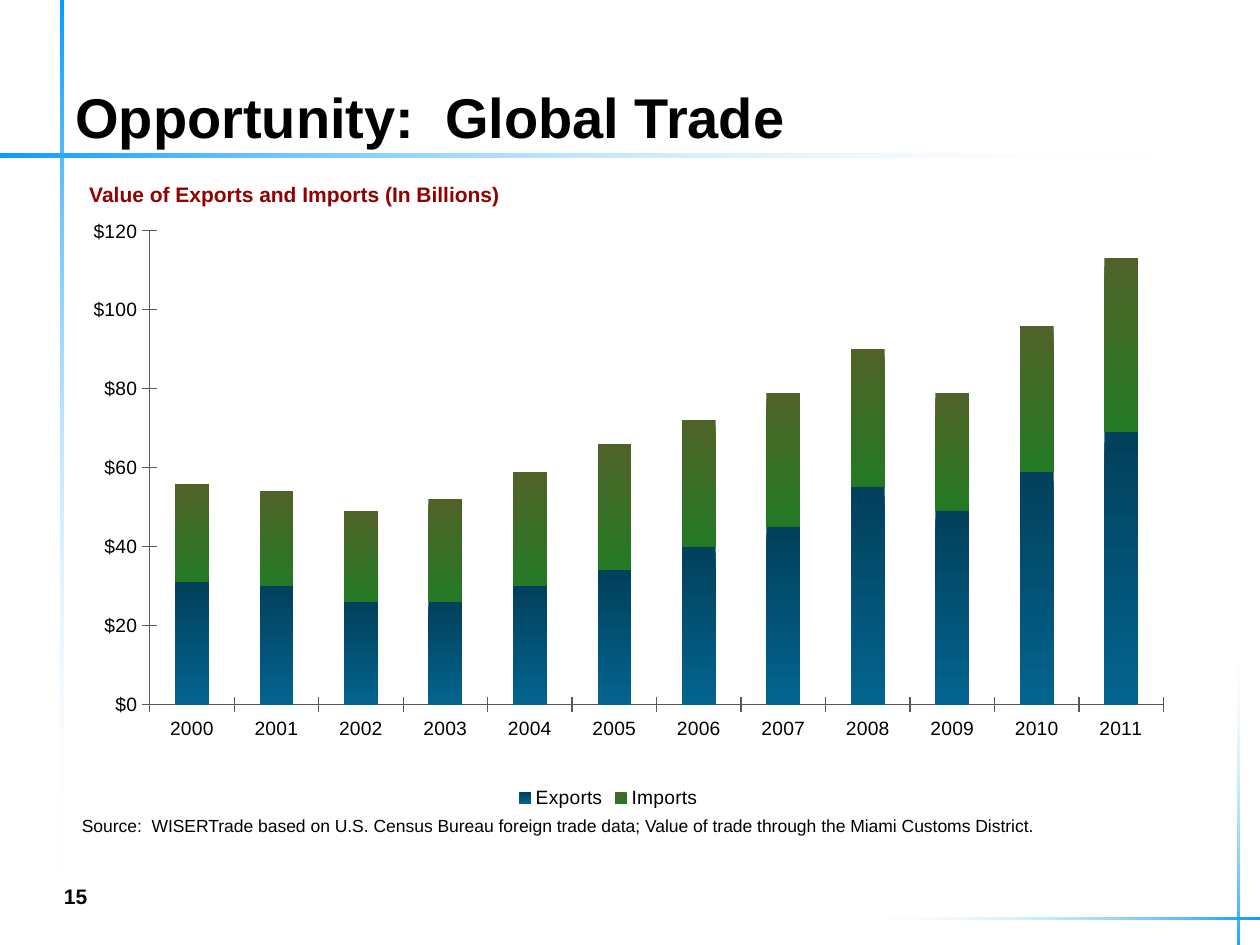
"""Build a slide with a stacked column chart of exports and imports."""
import pptx
import pptx.chart.data
import pptx.dml.color
import pptx.enum.chart
import pptx.enum.shapes
import pptx.enum.text
import pptx.oxml
import pptx.oxml.ns
import pptx.util

Cm = pptx.util.Cm
Pt = pptx.util.Pt
RGB = pptx.dml.color.RGBColor
Anchor = pptx.enum.text.MSO_ANCHOR
Tick = pptx.enum.chart.XL_TICK_MARK

BLACK = RGB(0x00, 0x00, 0x00)
WHITE = RGB(0xFF, 0xFF, 0xFF)
SKY = RGB(0x00, 0x99, 0xFF)
MAROON = RGB(0x92, 0x00, 0x00)
GREY = RGB(0x59, 0x59, 0x59)
NAVY = RGB(0x02, 0x40, 0x5C)
BLUE = RGB(0x03, 0x64, 0x8F)
OLIVE = RGB(0x4F, 0x62, 0x28)
GREEN = RGB(0x24, 0x7A, 0x24)

YEARS = [str(year) for year in range(2000, 2012)]
TRADE = {
    "Exports": ([31, 30, 26, 26, 30, 34, 40, 45, 55, 49, 59, 69], (NAVY, BLUE)),
    "Imports": ([25, 24, 23, 26, 29, 32, 32, 34, 35, 30, 37, 44], (OLIVE, GREEN)),
}
PLOT = {"x": 0.087, "y": 0.034, "w": 0.913, "h": 0.785}


def put(item, **values):
    """Set each named value on the item."""
    for name, value in values.items():
        setattr(item, name, value)


def blend(fill, pair):
    """Fill from the first colour at the top to the second at the bottom."""
    fill.gradient()
    fill.gradient_angle = 270
    for stop, tone in zip(fill.gradient_stops, pair):
        stop.color.rgb = tone


class Page:
    """Hold the text style and the current slide."""

    font = {"name": "Arial", "bold": False}

    def __init__(self, deck):
        """Add a blank slide to the deck."""
        self.slide = deck.slides.add_slide(deck.slide_layouts[6])

    def style(self, font, tone=BLACK, **values):
        """Apply the shared font with its own changes."""
        put(font, **{**self.font, **values})
        font.color.rgb = tone

    def text(self, words, box, size, tone=BLACK, bold=False, anchor=Anchor.TOP):
        """Add a text box."""
        frame = self.slide.shapes.add_textbox(*map(Cm, box)).text_frame
        put(frame, word_wrap=True, vertical_anchor=anchor)
        run = frame.paragraphs[0].add_run()
        run.text = words
        self.style(run.font, tone, size=Pt(size), bold=bold)

    def streak(self, box, turn):
        """Add a thin bar that fades out from its top end."""
        kind = pptx.enum.shapes.MSO_SHAPE.RECTANGLE
        bar = self.slide.shapes.add_shape(kind, *map(Cm, box))
        bar.rotation = turn
        bar.shadow.inherit = False
        bar.line.fill.background()
        blend(bar.fill, (SKY, WHITE))
        last = bar._element.spPr.findall(".//" + pptx.oxml.ns.qn("a:srgbClr"))[-1]
        last.append(pptx.oxml.parse_xml(
            f'<a:alpha {pptx.oxml.ns.nsdecls("a")} val="0"/>'))

    def place(self, chart):
        """Fix the inner plot area within the chart."""
        area = chart._chartSpace.chart.plotArea
        for old in area.findall(pptx.oxml.ns.qn("c:layout")):
            area.remove(old)
        modes = "".join(f'<c:{side}Mode val="edge"/>' for side in "xy")
        sizes = "".join(f'<c:{side} val="{part}"/>' for side, part in PLOT.items())
        area.insert(0, pptx.oxml.parse_xml(
            f'<c:layout {pptx.oxml.ns.nsdecls("c")}><c:manualLayout>'
            f'<c:layoutTarget val="inner"/>{modes}{sizes}'
            '</c:manualLayout></c:layout>'))

    def chart(self, box):
        """Add the stacked column chart."""
        data = pptx.chart.data.CategoryChartData(number_format='"$"#,##0')
        data.categories = YEARS
        for name, (values, _) in TRADE.items():
            data.add_series(name, values)
        kind = pptx.enum.chart.XL_CHART_TYPE.COLUMN_STACKED
        chart = self.slide.shapes.add_chart(kind, *map(Cm, box), data).chart
        put(chart, has_title=False, has_legend=True)
        self.style(chart.font, size=Pt(11))
        put(chart.legend, include_in_layout=False,
            position=pptx.enum.chart.XL_LEGEND_POSITION.BOTTOM)
        put(chart.plots[0], gap_width=150, overlap=100, vary_by_categories=False)
        for series in chart.plots[0].series:
            blend(series.format.fill, TRADE[series.name][1])
        for axis in (chart.category_axis, chart.value_axis):
            put(axis, has_major_gridlines=False, major_tick_mark=Tick.CROSS,
                minor_tick_mark=Tick.NONE)
            axis.format.line.color.rgb = GREY
            axis.format.line.width = Pt(0.75)
        put(chart.value_axis, minimum_scale=0, maximum_scale=120, major_unit=20)
        put(chart.value_axis.tick_labels, number_format='"$"#,##0',
            number_format_is_linked=False)
        self.place(chart)


def main():
    """Build and save the deck."""
    deck = pptx.Presentation()
    put(deck, slide_width=Cm(25.4), slide_height=Cm(19.05))
    page = Page(deck)
    page.streak((11.47, -8.81, 0.07, 23.88), 270)
    page.streak((1.22, -0.23, 0.06, 17.96), 0)
    page.streak((21.29, 14.27, 0.04, 8.51), 90)
    page.streak((24.94, 12.8, 0.04, 6.71), 180)
    page.text("Opportunity:  Global Trade", (1.27, -0.03, 22.86, 3.18), 32,
              bold=True, anchor=Anchor.BOTTOM)
    page.text("15", (1.04, 17.55, 1.85, 1.02), 12, bold=True, anchor=Anchor.MIDDLE)
    page.text("Source:  WISERTrade based on U.S. Census Bureau foreign trade data; "
              "Value of trade through the Miami Customs District.",
              (1.4, 16.31, 21.18, 0.69), 10)
    page.chart((1.07, 4.24, 22.4, 12.17))
    page.text("Value of Exports and Imports (In Billions)",
              (1.55, 3.53, 10.36, 0.76), 12, MAROON, bold=True)
    deck.save("out.pptx")


if __name__ == "__main__":
    main()
